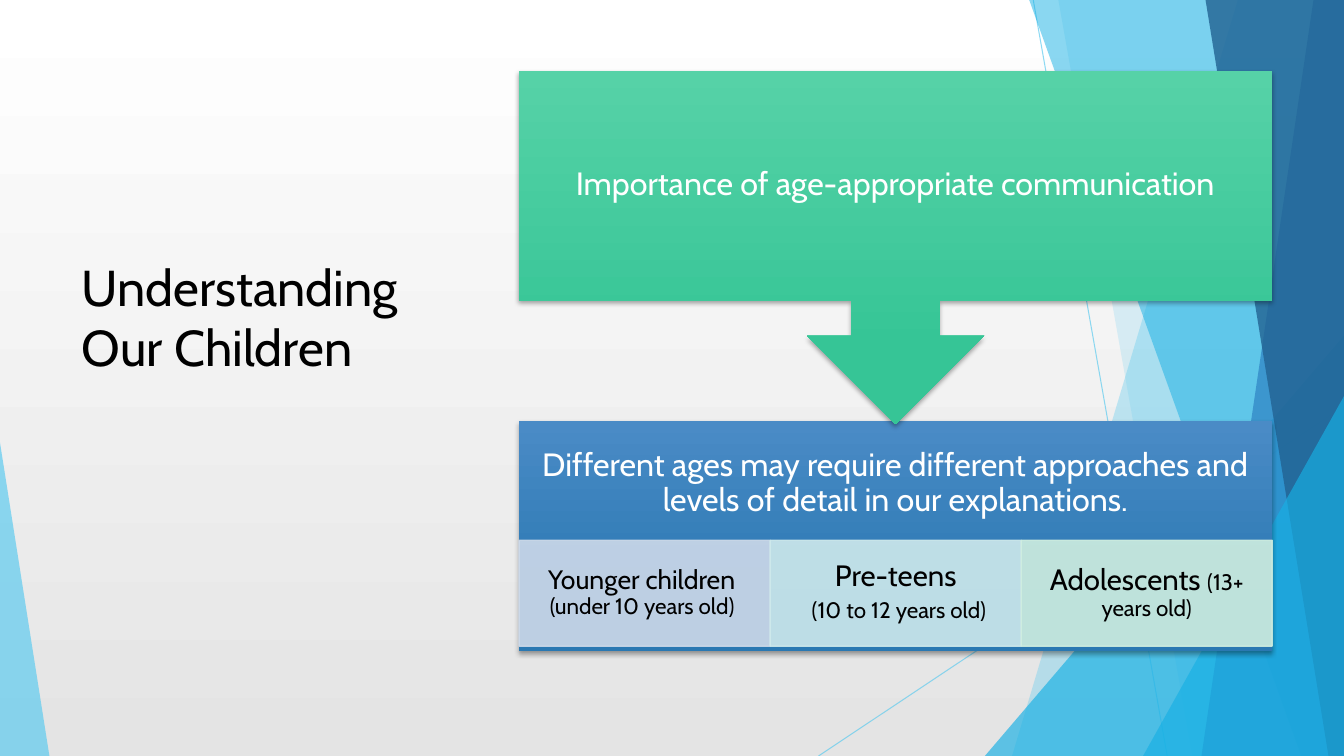
from dataclasses import dataclass

from lxml import etree
from pptx import Presentation
from pptx.dml.color import RGBColor
from pptx.enum.shapes import MSO_CONNECTOR, MSO_SHAPE
from pptx.enum.text import MSO_ANCHOR, MSO_AUTO_SIZE, PP_ALIGN
from pptx.oxml.ns import qn
from pptx.util import Inches, Pt

RECTANGLE = MSO_SHAPE.RECTANGLE
TRIANGLE = MSO_SHAPE.ISOSCELES_TRIANGLE
CALLOUT = MSO_SHAPE.DOWN_ARROW_CALLOUT
STRAIGHT = MSO_CONNECTOR.STRAIGHT
TOP, MIDDLE = MSO_ANCHOR.TOP, MSO_ANCHOR.MIDDLE
LEFT, CENTER = PP_ALIGN.LEFT, PP_ALIGN.CENTER
NO_AUTOFIT = MSO_AUTO_SIZE.NONE
SLIDE_WIDTH, SLIDE_HEIGHT = Inches(13.333), Inches(7.5)


@dataclass(frozen=True)
class Theme:
    font: str = "Cabin"
    dark_text: str = "000000"
    light_text: str = "FFFFFF"
    sky: str = "5FCBEF"
    cyan: str = "17B0E4"
    blue: str = "2E83C3"
    navy: str = "226292"
    backdrop: tuple = ("FFFFFF", "E4E4E4")
    green_panel: tuple = ("56D2A7", "36C596")
    blue_panel: tuple = ("4A8BC6", "2A78B2")
    title_size: int = 36
    panel_size: int = 23
    group_size: int = 21
    small_group_size: int = 19
    age_size: int = 16


THEME = Theme()


@dataclass(frozen=True)
class Box:
    """Shares of the slide in percent."""
    left: float
    top: float
    width: float
    height: float

    def lengths(self) -> tuple:
        return across(self.left), down(self.top), across(self.width), down(self.height)


@dataclass(frozen=True)
class Ray:
    start: tuple
    end: tuple


@dataclass(frozen=True)
class Band:
    top_x: float
    bottom_x: float
    color: str
    opacity: int


@dataclass(frozen=True)
class Wedge:
    box: Box
    apex: float
    color: str
    opacity: int


@dataclass(frozen=True)
class AgeGroup:
    color: str
    lines: tuple


RAYS = (Ray((76.88, 0), (86.85, 100)), Ray((100, 53.73), (60.9, 100)))
FACETS = (
    Band(92.1, 75.3, THEME.sky, 36),
    Band(78.75, 88.73, THEME.sky, 20),
    Wedge(Box(73.28, 44.4, 26.72, 55.6), 1, THEME.cyan, 66),
    Band(76.58, 96.83, THEME.cyan, 50),
    Band(97.73, 89.4, THEME.blue, 70),
    Band(89.7, 98.85, THEME.navy, 80),
    Wedge(Box(85.05, 52.4, 14.95, 47.6), 1, THEME.cyan, 66),
    Wedge(Box(0, 58.53, 3.68, 41.47), 0, THEME.sky, 70),
)
TITLE_BOX = Box(5.33, 33.2, 29.78, 56.13)
CALLOUT_BOX = Box(38.63, 9.33, 56.03, 46.8)
APPROACH_BOX = Box(38.63, 55.73, 56.03, 30.4)
AGE_TOP, AGE_HEIGHT = 71.47, 14
PANEL_INSET, AGE_SIDE_INSET, AGE_END_INSET = 1.35, 1.17, 0.23
IMPORTANCE = "Importance of age-appropriate communication"
APPROACHES = ("Different ages may require different approaches and "
              "levels of detail in our explanations.")
AGE_GROUPS = (
    AgeGroup("CDD9E9", ((("Younger children ", THEME.small_group_size),),
                        (("(under 10 years old) ", THEME.age_size),))),
    AgeGroup("CEE9EC", ((("Pre-teens", THEME.group_size),),
                        ((" ", THEME.group_size),
                         ("(10 to 12 years old)", THEME.age_size)))),
    AgeGroup("CFEEE0", ((("Adolescents ", THEME.group_size),
                         ("(13+ years old)", THEME.age_size)),)),
)


def across(share: float) -> int:
    return round(SLIDE_WIDTH * share / 100)


def down(share: float) -> int:
    return round(SLIDE_HEIGHT * share / 100)


def fade(shape, opacity: int) -> None:
    for color in shape._element.spPr.iter(qn("a:srgbClr")):
        etree.SubElement(color, qn("a:alpha"), val=str(opacity * 1000))


def paint(shape, color: str, opacity: int) -> None:
    shape.shadow.inherit = False
    shape.fill.solid()
    shape.fill.fore_color.rgb = RGBColor.from_string(color)
    shape.line.fill.background()
    fade(shape, opacity)


def shade(fill, colors: tuple, end: float) -> None:
    fill.gradient()
    fill.gradient_angle = 270
    for stop, color, position in zip(fill.gradient_stops, colors, (0, end)):
        stop.color.rgb = RGBColor.from_string(color)
        stop.position = position


def cast_shadow(shape) -> None:
    shape.shadow.inherit = False
    effects = shape._element.spPr.find(qn("a:effectLst"))
    shadow = etree.SubElement(effects, qn("a:outerShdw"), blurRad=str(Pt(3)),
                              dist=str(Pt(2)), dir="5400000", rotWithShape="0")
    color = etree.SubElement(shadow, qn("a:srgbClr"), val="000000")
    etree.SubElement(color, qn("a:alpha"), val="35000")


def write(shape, lines: tuple, color: str, insets: tuple) -> None:
    frame = shape.text_frame
    frame.word_wrap = True
    frame.vertical_anchor = MIDDLE
    side, top, bottom = insets
    frame.margin_left = frame.margin_right = across(side)
    frame.margin_top, frame.margin_bottom = across(top), across(bottom)
    for index, pieces in enumerate(lines):
        paragraph = frame.add_paragraph() if index else frame.paragraphs[0]
        paragraph.alignment = CENTER
        paragraph.line_spacing = 0.9
        paragraph.font.name = THEME.font
        paragraph.font.color.rgb = RGBColor.from_string(color)
        sizes = {size for _, size in pieces}
        if len(sizes) == 1:
            paragraph.font.size = Pt(sizes.pop())
        for text, size in pieces:
            run = paragraph.add_run()
            run.text = text
            if paragraph.font.size is None:
                run.font.size = Pt(size)


def draw_ray(shapes, ray: Ray) -> None:
    (x1, y1), (x2, y2) = ray.start, ray.end
    line = shapes.add_connector(STRAIGHT, across(x1), down(y1), across(x2), down(y2))
    line.line.color.rgb = RGBColor.from_string(THEME.sky)
    line.line.width = Pt(0.75)
    fade(line, 70)
    etree.SubElement(line._element.spPr, qn("a:effectLst"))


def draw_facet(shapes, facet: Band | Wedge) -> None:
    if isinstance(facet, Wedge):
        shape = shapes.add_shape(TRIANGLE, *facet.box.lengths())
        shape.adjustments[0] = facet.apex
    else:
        outline = shapes.build_freeform(across(facet.top_x), 0)
        corners = ((100, 0), (100, 100), (facet.bottom_x, 100))
        outline.add_line_segments([(across(x), down(y)) for x, y in corners])
        shape = outline.convert_to_shape()
    paint(shape, facet.color, facet.opacity)


def draw_panel(shapes, kind, box: Box, colors: tuple, text: str, bottom: float) -> None:
    panel = shapes.add_shape(kind, *box.lengths())
    shade(panel.fill, colors, 0.78)
    panel.line.fill.background()
    cast_shadow(panel)
    write(panel, (((text, THEME.panel_size),),), THEME.light_text,
          (PANEL_INSET, PANEL_INSET, bottom))


def draw_age_group(shapes, group: AgeGroup, column: int) -> None:
    width = APPROACH_BOX.width / len(AGE_GROUPS)
    box = Box(APPROACH_BOX.left + column * width, AGE_TOP, width, AGE_HEIGHT)
    cell = shapes.add_shape(RECTANGLE, *box.lengths())
    cell.line.color.rgb = RGBColor.from_string(group.color)
    cell.line.width = Pt(1)
    cell.fill.solid()
    cell.fill.fore_color.rgb = RGBColor.from_string(group.color)
    cell.shadow.inherit = False
    fade(cell, 90)
    write(cell, group.lines, THEME.dark_text,
          (AGE_SIDE_INSET, AGE_END_INSET, AGE_END_INSET))


def set_title(title) -> None:
    title.left, title.top, title.width, title.height = TITLE_BOX.lengths()
    frame = title.text_frame
    frame.text = "Understanding Our Children"
    frame.word_wrap = True
    frame.auto_size = NO_AUTOFIT
    frame.vertical_anchor = TOP
    paragraph = frame.paragraphs[0]
    paragraph.alignment = LEFT
    paragraph.font.name = THEME.font
    paragraph.font.size = Pt(THEME.title_size)
    paragraph.font.color.rgb = RGBColor.from_string(THEME.dark_text)


def main() -> None:
    deck = Presentation()
    deck.slide_width, deck.slide_height = SLIDE_WIDTH, SLIDE_HEIGHT
    slide = deck.slides.add_slide(deck.slide_layouts[5])
    shapes = slide.shapes
    shade(slide.background.fill, THEME.backdrop, 1)
    for ray in RAYS:
        draw_ray(shapes, ray)
    for facet in FACETS:
        draw_facet(shapes, facet)
    set_title(shapes.title)
    draw_panel(shapes, RECTANGLE, APPROACH_BOX, THEME.blue_panel, APPROACHES, 9.22)
    for column, group in enumerate(AGE_GROUPS):
        draw_age_group(shapes, group, column)
    draw_panel(shapes, CALLOUT, CALLOUT_BOX, THEME.green_panel, IMPORTANCE, PANEL_INSET)
    deck.save("out.pptx")


if __name__ == "__main__":
    main()
